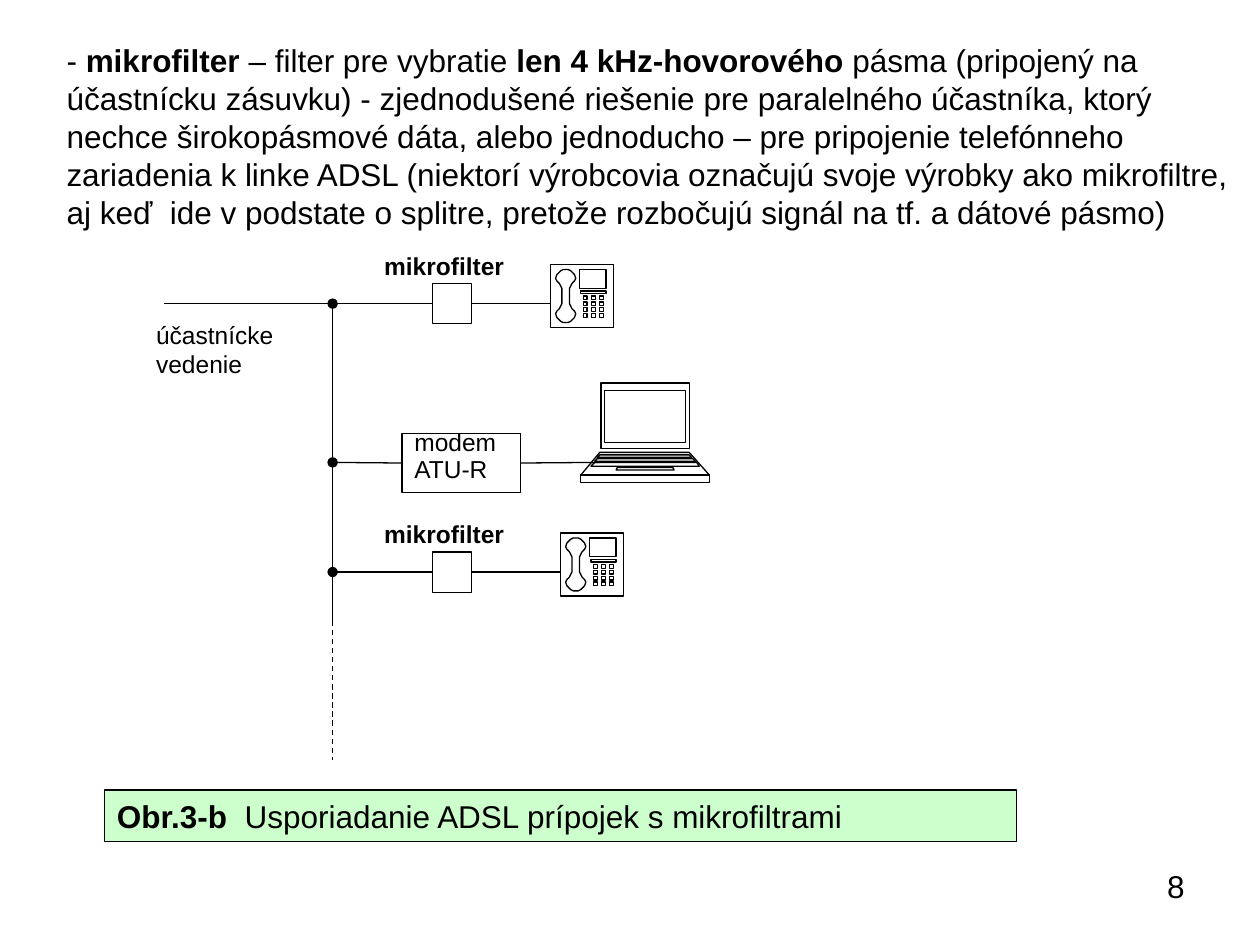
from lxml.etree import SubElement
from pptx import Presentation
from pptx.dml.color import RGBColor
from pptx.enum.dml import MSO_LINE
from pptx.enum.shapes import MSO_CONNECTOR, MSO_SHAPE
from pptx.enum.text import PP_ALIGN
from pptx.oxml.ns import qn
from pptx.util import Inches, Pt

LINE = MSO_CONNECTOR.STRAIGHT
RECT = MSO_SHAPE.RECTANGLE
DASH = MSO_LINE.DASH
LEFT, RIGHT = PP_ALIGN.LEFT, PP_ALIGN.RIGHT
BLACK = "000000"
GREEN = "CCFFCC"
BUS = 2.64


def color(code):
    """Turn a hex string into a colour."""
    return RGBColor.from_string(code)


def write(frame, paras, size, align=LEFT, lead=None):
    """Fill a text frame with paragraphs of (text, bold) runs."""
    frame.word_wrap = True
    for i, runs in enumerate(paras):
        para = frame.paragraphs[0] if i == 0 else frame.add_paragraph()
        para.alignment = align
        para.line_spacing = lead
        para.space_before = Pt(size / 2 if i else 0)
        for text, bold in runs:
            run = para.add_run()
            run.text = text
            run.font.name = "Arial"
            run.font.size = Pt(size)
            run.font.bold = bold
            run.font.color.rgb = color(BLACK)


def label(slide, box, paras, size=14, align=LEFT, lead=None):
    """Add a text box."""
    area = slide.shapes.add_textbox(*map(Inches, box))
    write(area.text_frame, paras, size, align, lead)


def ink(shape, fill=None):
    """Give a shape a thin black outline and an optional fill."""
    shape.shadow.inherit = False
    shape.line.color.rgb = color(BLACK)
    shape.line.width = Pt(0.75)
    if fill:
        shape.fill.solid()
        shape.fill.fore_color.rgb = color(fill)
    else:
        shape.fill.background()
    return shape


def block(slide, box, fill=None):
    """Add an outlined rectangle."""
    return ink(slide.shapes.add_shape(RECT, *map(Inches, box)), fill)


def wire(slide, start, end, dot=False, dash=None, source=None, target=None):
    """Draw a line, joined to the right of source and the left of target."""
    link = slide.shapes.add_connector(LINE, *map(Inches, start + end))
    link.line.color.rgb = color(BLACK)
    link.line.width = Pt(0.75)
    if dash:
        link.line.dash_style = dash
    if source:
        link.begin_connect(source, 3)
    if target:
        link.end_connect(target, 1)
    if dot:
        SubElement(link.line._get_or_add_ln(), qn("a:headEnd"), type="oval")
    SubElement(link._element.spPr, qn("a:effectLst"))


def sketch(slide, left, top, rings):
    """Draw closed outlines as one freeform relative to a corner."""
    rings = [[(Inches(x), Inches(y)) for x, y in ring] for ring in rings]
    pen = slide.shapes.build_freeform(*rings[0][0])
    for i, ring in enumerate(rings):
        if i:
            pen.move_to(*ring[0])
        pen.add_line_segments(ring[1:], close=True)
    ink(pen.convert_to_shape(Inches(left), Inches(top)))


def slab(top, low, a, b, c=None, d=None):
    """Return a trapezoid from a-b at the top to c-d at the bottom."""
    c, d = (a, b) if c is None else (c, d)
    return [(a, top), (b, top), (d, low), (c, low)]


def grip(x, y):
    """Return a handset outline mirrored about its centre."""
    arc = [(0.03, 0.06), (0.04, 0.08), (0.05, 0.1), (0.07, 0.12), (0.08, 0.14),
           (0.07, 0.17), (0.06, 0.18), (0.04, 0.2), (0.02, 0.21)]
    ring = []
    for h, v, step in ((1, -1, 1), (-1, -1, -1), (-1, 1, 1), (1, 1, -1)):
        ring += [(x + h * p, y + v * q) for p, q in arc[::step]]
    return ring


def phone(slide, left, top):
    """Draw a desk phone with a handset, a screen and keys."""
    rings = [slab(0, 0.5, 0, 0.5), grip(0.12, 0.25),
             slab(0.04, 0.19, 0.23, 0.44), slab(0.21, 0.23, 0.24, 0.44)]
    for i in range(12):
        x, y = 0.26 + 0.13 * (i % 3) / 2, 0.25 + 0.14 * (i // 3) / 3
        rings.append(slab(y, y + 0.03, x, x + 0.03))
    sketch(slide, left, top, rings)


def laptop(slide, left, top):
    """Draw an open laptop."""
    sketch(slide, left, top, [
        slab(0, 0.52, 0.16, 0.86),
        slab(0.06, 0.47, 0.19, 0.83),
        slab(0.55, 0.73, 0.15, 0.86, 0, 1.02),
        slab(0.73, 0.79, 0, 1.02),
        slab(0.57, 0.59, 0.15, 0.86, 0.13, 0.88),
        slab(0.6, 0.62, 0.13, 0.89, 0.11, 0.91),
        slab(0.63, 0.66, 0.11, 0.92, 0.08, 0.94),
        slab(0.67, 0.69, 0.29, 0.73, 0.28, 0.74),
    ])


def branch(slide, y, start, end, dot):
    """Place a microfilter branch that leads to a phone."""
    box = block(slide, (3.43, y - 0.16, 0.31, 0.32))
    wire(slide, (start, y), (3.43, y), dot, target=box)
    wire(slide, (3.74, y), (end, y), source=box)
    phone(slide, end, y - 0.31)
    label(slide, (2.95, y - 0.47, 1.42, 0.33), [[("mikrofilter", True)]])


def modem(slide, y):
    """Place the modem branch that leads to a laptop."""
    box = block(slide, (3.19, y - 0.23, 0.94, 0.47))
    wire(slide, (BUS, y), (3.19, y), True, target=box)
    wire(slide, (4.13, y), (4.76, y), source=box)
    label(slide, (3.19, y - 0.23, 1.02, 0.45),
          [[("modem", False)], [("ATU-R", False)]], lead=0.5)
    laptop(slide, 4.61, y - 0.63)


def scheme(slide, top):
    """Place the subscriber line with its three branches."""
    wire(slide, (BUS, top), (BUS, top + 2.52), True)
    wire(slide, (BUS, top + 2.52), (BUS, top + 3.62), dash=DASH)
    branch(slide, top, 1.3, 4.37, False)
    modem(slide, top + 1.26)
    branch(slide, top + 2.13, BUS, 4.45, True)
    label(slide, (1.14, top + 0.08, 1.42, 0.57),
          [[("účastnícke vedenie", False)]])


def intro(slide, box):
    """Place the opening paragraph."""
    label(slide, box, [[
        ("- ", False), ("mikrofilter", True),
        (" – filter pre vybratie ", False), ("len 4 kHz-hovorového", True),
        (" pásma (pripojený na účastnícku zásuvku) - zjednodušené riešenie "
         "pre paralelného účastníka, ktorý nechce širokopásmové dáta, alebo "
         "jednoducho – pre pripojenie telefónneho zariadenia k linke ADSL "
         "(niektorí výrobcovia označujú svoje výrobky ako mikrofiltre, aj "
         "keď  ide v podstate o splitre, pretože rozbočujú signál na tf. a "
         "dátové pásmo)", False)]], 18)


def caption(slide, box):
    """Place the green figure caption."""
    bar = block(slide, box, GREEN)
    write(bar.text_frame, [[
        ("Obr.3-b  ", True),
        ("Usporiadanie ADSL prípojek s mikrofiltrami", False)]], 18)


def main():
    """Build the slide and save it."""
    deck = Presentation()
    deck.slide_width, deck.slide_height = Inches(10), Inches(7.5)
    slide = deck.slides.add_slide(deck.slide_layouts[6])
    intro(slide, (0.43, 0.28, 9.57, 1.6))
    scheme(slide, 2.41)
    caption(slide, (0.83, 6.27, 7.24, 0.41))
    label(slide, (7.17, 6.83, 2.33, 0.52), [[("8", False)]], 18, RIGHT)
    deck.save("out.pptx")


if __name__ == "__main__":
    main()
